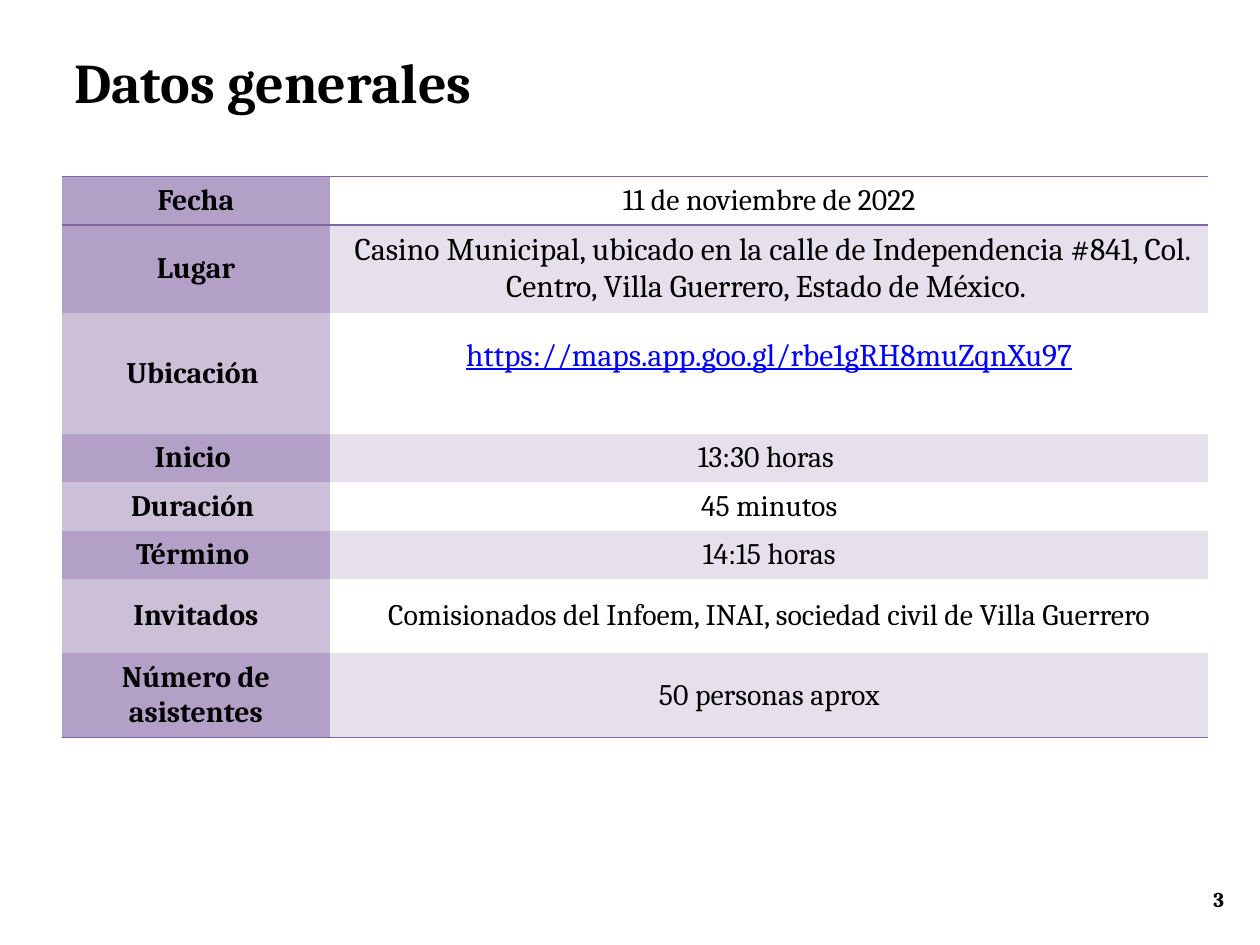
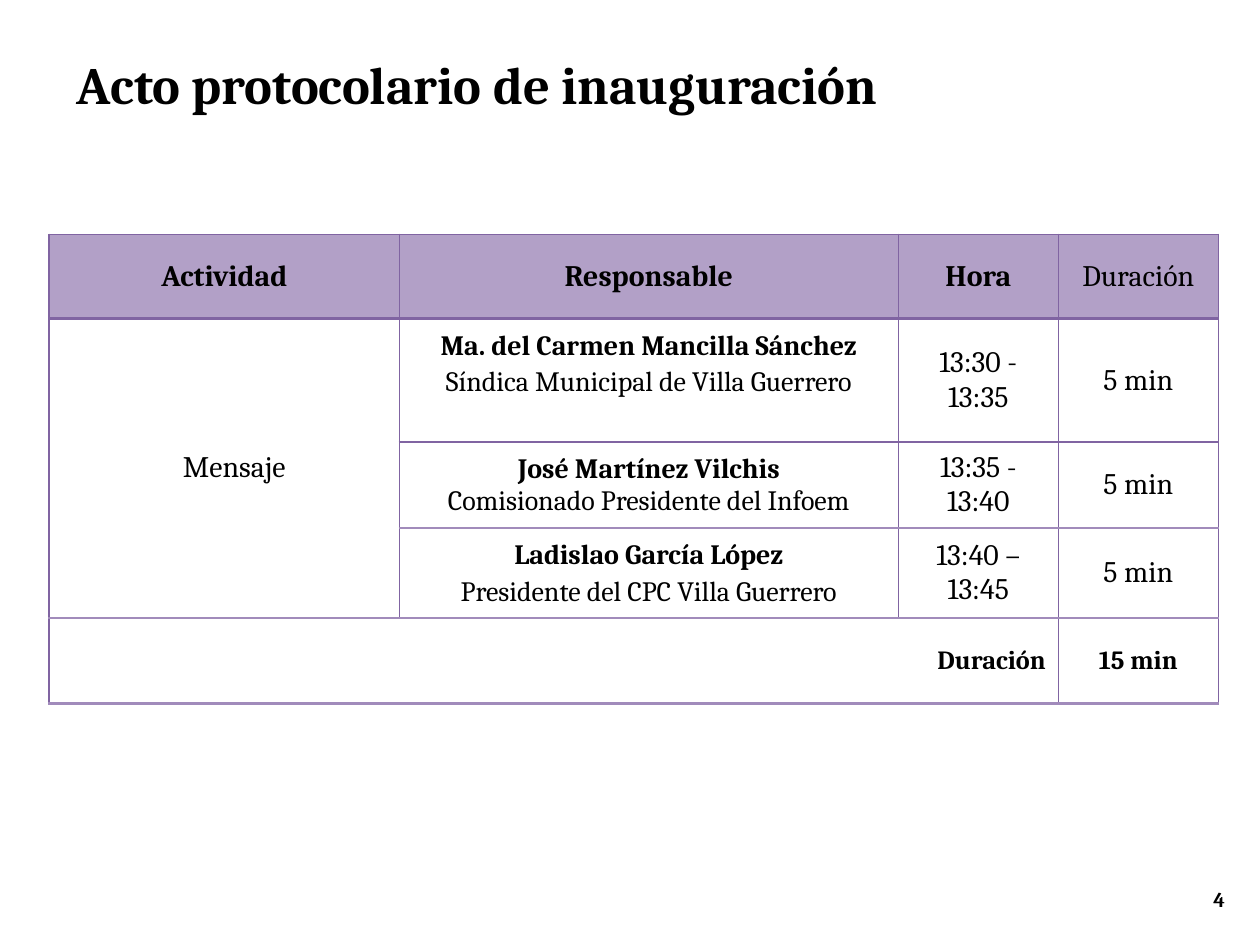
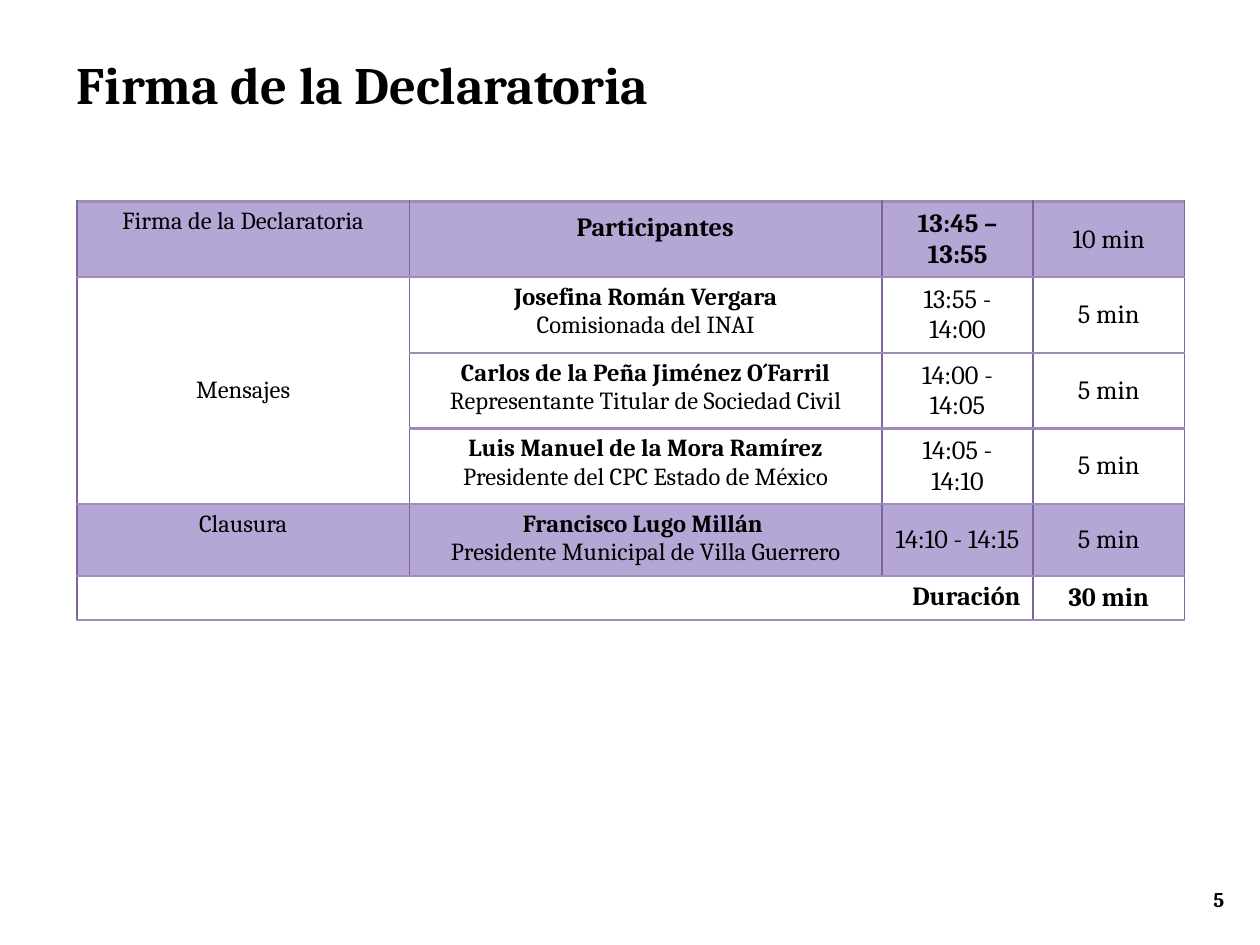
import lxml.etree
import pptx
import pptx.dml.color
import pptx.enum.text
import pptx.oxml.ns
import pptx.util

Inches = pptx.util.Inches
Pt = pptx.util.Pt
ALIGN = pptx.enum.text.PP_ALIGN
ANCHOR = pptx.enum.text.MSO_ANCHOR

FONT = "Cambria"
NO_STYLE = "{2D5ABB26-0587-4C30-8999-92F81FD0307C}"
COLORS = {
    "black": "000000",
    "white": "FFFFFF",
    "link": "0000FF",
    "rule": "8064A2",
    "soft_rule": "A18BBB",
    "purple": "B2A0C7",
    "lilac": "CCC0D9",
    "mist": "E6E0EC",
    "violet": "B4A7D6",
}
THIN = ("rule", 1)
THICK = ("rule", 2)
SOFT = ("soft_rule", 1.5)


def cell(text, **style):
    return text, style


def person(name, role, **style):
    return name + "\n" + role, {"bold": [True, False], "anchor": ANCHOR.TOP, **style}


def general_rows():
    facts = [
        ("Fecha", "11 de noviembre de 2022", {}),
        ("Lugar", " Casino Municipal, ubicado en la calle de Independencia #841, Col. Centro, "
                  "Villa Guerrero, Estado de México. ", {"size": 18}),
        ("Ubicación ", "https://maps.app.goo.gl/rbe1gRH8muZqnXu97",
         {"size": 18, "color": "link", "underline": True, "bottom": 0.33}),
        ("Inicio ", "13:30 horas ", {}),
        ("Duración ", "45 minutos", {}),
        ("Término ", "14:15 horas", {}),
        ("Invitados", "Comisionados del Infoem, INAI, sociedad civil de Villa Guerrero", {}),
        ("Número de asistentes", "50 personas aprox", {}),
    ]
    rows = []
    for number, (label, value, style) in enumerate(facts):
        banded = number % 2 == 1
        label_fill = "purple" if banded or number == 0 else "lilac"
        rows.append([cell(label, bold=[True], fill=label_fill),
                     cell(value, fill="mist" if banded else "white", **style)])
    return rows


AGENDA = [
    {
        "title": "Datos generales", "title_at": (0.59, 0.37, 3.25, 0.56), "title_size": 32,
        "page": "3", "at": (0.49, 1.4), "size": 17,
        "columns": [2.13, 6.97],
        "heights": [0.34, 0.34, 0.96, 0.34, 0.34, 0.34, 0.59, 0.59],
        "horizontal": [THIN, THIN] + [None] * 6 + [THIN], "vertical": None,
        "fills": ["white"] * 8, "merges": [],
        "rows": general_rows(),
    },
    {
        "title": "Acto protocolario de inauguración", "title_at": (0.61, 0.4, 8.61, 0.52),
        "title_size": 30, "page": "4", "at": (0.39, 1.86), "size": 17,
        "columns": [2.78, 3.96, 1.27, 1.27],
        "heights": [0.67, 0.98, 0.68, 0.68, 0.68],
        "horizontal": [THIN, THICK, THIN, SOFT, SOFT, SOFT], "vertical": THIN,
        "fills": ["purple"] + ["white"] * 4,
        "merges": [((1, 0), (3, 0)), ((4, 0), (4, 2))],
        "rows": [
            [cell("Actividad", bold=[True]), cell("Responsable", bold=[True]),
             cell("Hora", bold=[True]), cell("Duración")],
            [cell("Mensaje", left=0.26),
             person("Ma. del Carmen Mancilla Sánchez", "Síndica Municipal de Villa Guerrero",
                    size=16, spacing=[1.15, 1.15]),
             cell("13:30 - 13:35"), cell("5 min")],
            [None,
             person("José Martínez Vilchis", "Comisionado Presidente del Infoem",
                    size=16, spacing=[1.15, 1]),
             cell("13:35 - 13:40"), cell("5 min")],
            [None,
             person("Ladislao García López", "Presidente del CPC Villa Guerrero",
                    size=16, spacing=[1.15, 1.15]),
             cell("13:40 – 13:45"), cell("5 min")],
            [cell("Duración", size=15, bold=[True], align=ALIGN.RIGHT), None, None,
             cell("15 min", size=15, bold=[True])],
        ],
    },
    {
        "title": "Firma de la Declaratoria", "title_at": (0.61, 0.4, 8.61, 0.52),
        "title_size": 30, "page": "5", "at": (0.61, 1.6), "size": 15,
        "columns": [2.64, 3.75, 1.2, 1.2],
        "heights": [0.3, 0.47, 0.47, 0.47, 0.29, 0.3],
        "horizontal": [SOFT] * 7, "vertical": THIN,
        "fills": ["violet", "white", "white", "white", "violet", "white"],
        "merges": [((1, 0), (3, 0)), ((5, 0), (5, 2))],
        "rows": [
            [cell("Firma de la Declaratoria", size=14, anchor=ANCHOR.TOP),
             cell("Participantes", bold=[True], anchor=ANCHOR.TOP, left=0.25, spacing=[1.15]),
             cell("13:45 – 13:55", bold=[True]), cell("10 min")],
            [cell("Mensajes", size=14),
             person("Josefina Román Vergara", "Comisionada del INAI", size=14),
             cell("13:55 - 14:00"), cell("5 min")],
            [None,
             person("Carlos de la Peña Jiménez O´Farril",
                    "Representante Titular de Sociedad Civil", size=14),
             cell("14:00 - 14:05"), cell("5 min")],
            [None,
             person("Luis Manuel de la Mora Ramírez",
                    "Presidente del CPC Estado de México", size=14),
             cell("14:05 - 14:10"), cell("5 min")],
            [cell("Clausura", size=14, anchor=ANCHOR.TOP),
             person("Francisco Lugo Millán ", "Presidente Municipal de Villa Guerrero", size=14),
             cell("14:10 - 14:15"), cell("5 min")],
            [cell("Duración", bold=[True], align=ALIGN.RIGHT, anchor=ANCHOR.TOP), None, None,
             cell("30 min", bold=[True])],
        ],
    },
]


def rgb(name):
    return pptx.dml.color.RGBColor.from_string(COLORS[name])


def apply(target, values):
    for attribute, value in values.items():
        setattr(target, attribute, value)


def set_font(font, size, bold, color="black", underline=False):
    apply(font, {"name": FONT, "size": Pt(size), "bold": bold, "underline": underline})
    font.color.rgb = rgb(color)


def set_frame(frame, left, top):
    apply(frame, {"margin_left": Inches(left), "margin_top": Inches(top), "margin_right": 0,
                  "margin_bottom": 0, "word_wrap": True, "vertical_anchor": ANCHOR.TOP,
                  "auto_size": pptx.enum.text.MSO_AUTO_SIZE.SHAPE_TO_FIT_TEXT})


def add_border(properties, side, rule):
    line = lxml.etree.SubElement(properties, pptx.oxml.ns.qn("a:ln" + side))
    if rule is None:
        lxml.etree.SubElement(line, pptx.oxml.ns.qn("a:noFill"))
        return
    color, width = rule
    line.set("w", str(Pt(width)))
    fill = lxml.etree.SubElement(line, pptx.oxml.ns.qn("a:solidFill"))
    lxml.etree.SubElement(fill, pptx.oxml.ns.qn("a:srgbClr")).set("val", COLORS[color])


def write_cell(box, text, style):
    apply(box, {"margin_left": Inches(style.get("left", 0.1)), "margin_right": Inches(0.1),
                "margin_top": Inches(0.05), "margin_bottom": Inches(style.get("bottom", 0.05)),
                "vertical_anchor": style.get("anchor", ANCHOR.MIDDLE)})
    lines = text.split("\n")
    bolds = style.get("bold", [False])
    spacings = style.get("spacing", [1] * len(lines))
    for number, (words, bold, spacing) in enumerate(zip(lines, bolds, spacings)):
        paragraph = box.text_frame.add_paragraph() if number else box.text_frame.paragraphs[0]
        apply(paragraph, {"alignment": style.get("align", ALIGN.CENTER), "line_spacing": spacing})
        run = paragraph.add_run()
        run.text = words
        set_font(run.font, style["size"], bold, style.get("color", "black"),
                 style.get("underline", False))


def add_schedule(slide, plan):
    columns, heights = plan["columns"], plan["heights"]
    left, top = plan["at"]
    frame = slide.shapes.add_table(len(heights), len(columns), Inches(left), Inches(top),
                                   Inches(sum(columns)), Inches(sum(heights)))
    table = frame.table
    apply(table, {"first_row": False, "horz_banding": False})
    frame._element.find(".//" + pptx.oxml.ns.qn("a:tableStyleId")).text = NO_STYLE
    for column, width in zip(table.columns, columns):
        column.width = Inches(width)
    for row, height in zip(table.rows, heights):
        row.height = Inches(height)
    for start, end in plan["merges"]:
        table.cell(*start).merge(table.cell(*end))
    for r, row in enumerate(plan["rows"]):
        for c, content in enumerate(row):
            if content is None:
                continue
            box = table.cell(r, c)
            text, style = content
            write_cell(box, text, {"size": plan["size"], **style})
            below = r + (box.span_height if box.is_merge_origin else 1)
            sides = {"L": plan["vertical"], "R": plan["vertical"],
                     "T": plan["horizontal"][r], "B": plan["horizontal"][below]}
            for side, rule in sides.items():
                add_border(box._tc.get_or_add_tcPr(), side, rule)
            box.fill.solid()
            box.fill.fore_color.rgb = rgb(style.get("fill", plan["fills"][r]))


def add_title(slide, plan):
    title = slide.shapes.title
    apply(title, dict(zip(("left", "top", "width", "height"), map(Inches, plan["title_at"]))))
    title.text_frame.text = plan["title"]
    set_frame(title.text_frame, 0, 0.01)
    paragraph = title.text_frame.paragraphs[0]
    paragraph.alignment = ALIGN.LEFT
    set_font(paragraph.runs[0].font, plan["title_size"], True)


def add_page_number(slide, page):
    number = slide.shapes.add_textbox(Inches(9.59), Inches(7.01), Inches(0.18), Inches(0.2))
    number.text_frame.text = page
    set_frame(number.text_frame, 0.04, 0)
    paragraph = number.text_frame.paragraphs[0]
    paragraph.line_spacing = 1.12
    set_font(paragraph.runs[0].font, 12, True)


def main():
    deck = pptx.Presentation()
    apply(deck, {"slide_width": Inches(10), "slide_height": Inches(7.5)})
    for plan in AGENDA:
        slide = deck.slides.add_slide(deck.slide_layouts[5])
        add_title(slide, plan)
        add_schedule(slide, plan)
        add_page_number(slide, plan["page"])
    deck.save("out.pptx")


if __name__ == "__main__":
    main()
